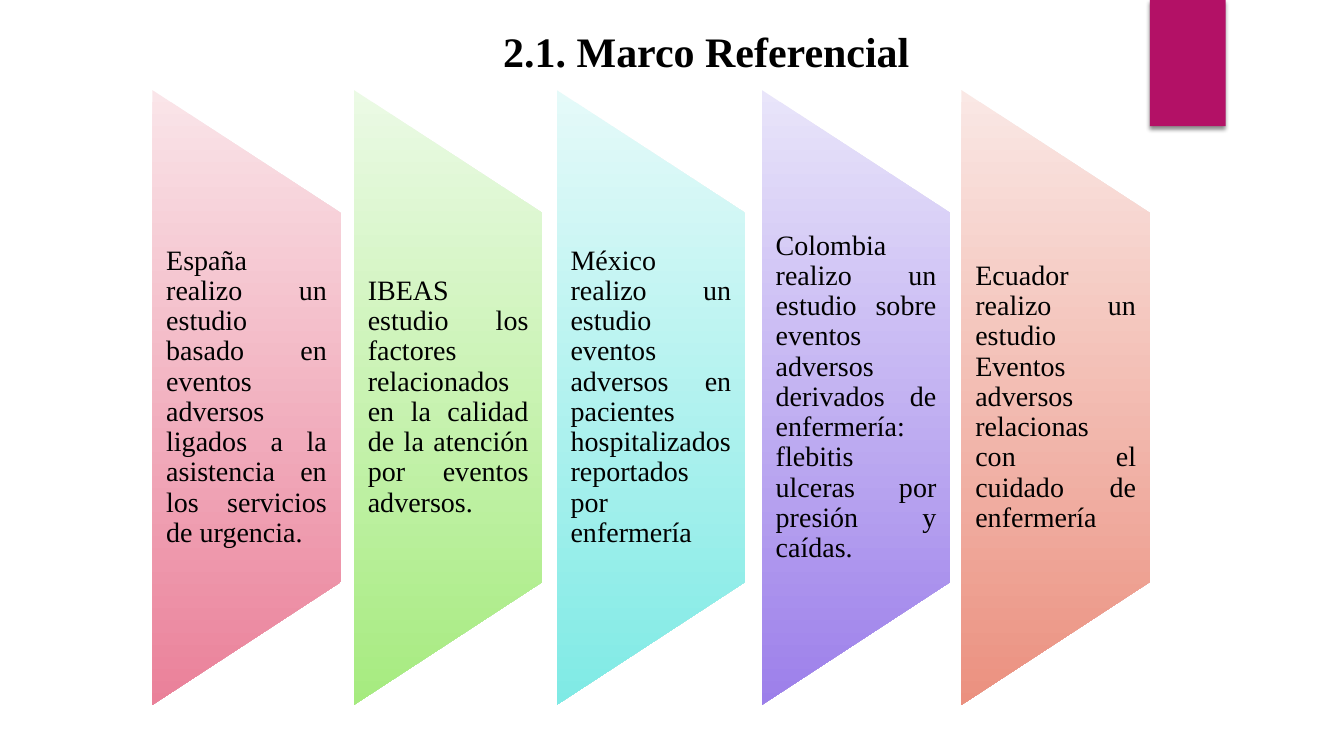
from dataclasses import dataclass
from lxml.etree import SubElement
from pptx import Presentation
from pptx.dml.color import RGBColor
from pptx.enum.shapes import MSO_SHAPE
from pptx.enum.text import MSO_ANCHOR, MSO_AUTO_SIZE, PP_ALIGN
from pptx.oxml.ns import qn
from pptx.util import Cm, Pt


@dataclass(frozen=True)
class Theme:
    font: str = "Times New Roman"
    text: str = "000000"
    accent: str = "B31166"
    title_size: int = 30
    body_size: int = 20
    line_spacing: float = 0.9


STUDIES = [
    (3.84, "FAE5E9", "EA8099", "España realizo un estudio basado en eventos adversos "
     "ligados a la asistencia en los servicios de urgencia."),
    (8.92, "EBFAE5", "A6EB7F", "IBEAS estudio los factores relacionados en la calidad "
     "de la atención por eventos adversos."),
    (14.03, "E5FAF9", "7FEAE5", "México realizo un estudio eventos adversos en "
     "pacientes hospitalizados reportados por enfermería"),
    (19.2, "E9E5FA", "9C7FEA", "Colombia realizo un estudio sobre eventos adversos "
     "derivados de enfermería: flebitis ulceras por presión y caídas."),
    (24.23, "FAE8E5", "EB907F", "Ecuador realizo un estudio Eventos adversos "
     "relacionas con el cuidado de enfermería"),
]
PANEL_TOP, PANEL_WIDTH, PANEL_HEIGHT = 2.27, 4.75, 15.49
TEXT_TOP, TEXT_HEIGHT = 5.36, 9.3


class SlideBuilder:
    def __init__(self, slide, theme):
        self.slide = slide
        self.theme = theme

    def set_text(self, tf, text, *, size, bold=False, align=PP_ALIGN.LEFT,
                 anchor=MSO_ANCHOR.TOP, margins=(0.25, 0.13)):
        tf.word_wrap = True
        tf.auto_size = MSO_AUTO_SIZE.NONE
        tf.vertical_anchor = anchor
        tf.margin_left = tf.margin_right = Cm(margins[0])
        tf.margin_top = tf.margin_bottom = Cm(margins[1])
        p = tf.paragraphs[0]
        p.alignment = align
        p.line_spacing = self.theme.line_spacing
        p.space_before = Pt(0)
        r = p.add_run()
        r.text = text
        r.font.name = self.theme.font
        r.font.size = Pt(size)
        r.font.bold = bold
        r.font.color.rgb = RGBColor.from_string(self.theme.text)

    def title(self, text, left, top, width, height):
        sp = self.slide.shapes.title
        sp.left, sp.top, sp.width, sp.height = map(Cm, (left, top, width, height))
        self.set_text(sp.text_frame, text, size=self.theme.title_size, bold=True,
                      align=PP_ALIGN.CENTER)

    def tab(self, left, top, width, height):
        sp = self.slide.shapes.add_shape(
            MSO_SHAPE.RECTANGLE, *map(Cm, (left, top, width, height)))
        sp.fill.solid()
        sp.fill.fore_color.rgb = RGBColor.from_string(self.theme.accent)
        sp.line.fill.background()
        sp.shadow.inherit = False
        effects = sp._element.spPr.find(qn("a:effectLst"))
        shadow = SubElement(effects, qn("a:outerShdw"), blurRad=str(Pt(3)),
                            dist=str(Pt(2)), dir="5400000", rotWithShape="0")
        color = SubElement(shadow, qn("a:srgbClr"), val="000000")
        SubElement(color, qn("a:alpha"), val="45000")

    def panel(self, left, top, width, height, light, dark):
        offset = (height - width) / 2
        sp = self.slide.shapes.add_shape(
            MSO_SHAPE.FLOWCHART_MANUAL_OPERATION,
            Cm(left - offset), Cm(top + offset), Cm(height), Cm(width))
        sp.rotation = 270
        sp.fill.gradient()
        sp.fill.gradient_angle = 270
        for stop, color, position in zip(sp.fill.gradient_stops, (light, dark), (0, 1)):
            stop.color.rgb = RGBColor.from_string(color)
            stop.position = position
        sp._element.spPr.find(qn("a:gradFill")).set("rotWithShape", "0")
        sp.line.fill.background()
        sp.shadow.inherit = False

    def body(self, text, left, top, width, height):
        sp = self.slide.shapes.add_textbox(*map(Cm, (left, top, width, height)))
        self.set_text(sp.text_frame, text, size=self.theme.body_size,
                      align=PP_ALIGN.JUSTIFY, anchor=MSO_ANCHOR.MIDDLE,
                      margins=(0.35, 0))


def main():
    prs = Presentation()
    prs.slide_width, prs.slide_height = Cm(33.87), Cm(19.05)
    s = SlideBuilder(prs.slides.add_slide(prs.slide_layouts[5]), Theme())
    s.tab(28.98, 0, 1.91, 3.18)
    for left, light, dark, text in STUDIES:
        s.panel(left, PANEL_TOP, PANEL_WIDTH, PANEL_HEIGHT, light, dark)
        s.body(text, left, TEXT_TOP, PANEL_WIDTH, TEXT_HEIGHT)
    s.title("2.1. Marco Referencial", 8.33, 0.66, 18.95, 2.44)
    prs.save("out.pptx")


if __name__ == "__main__":
    main()
